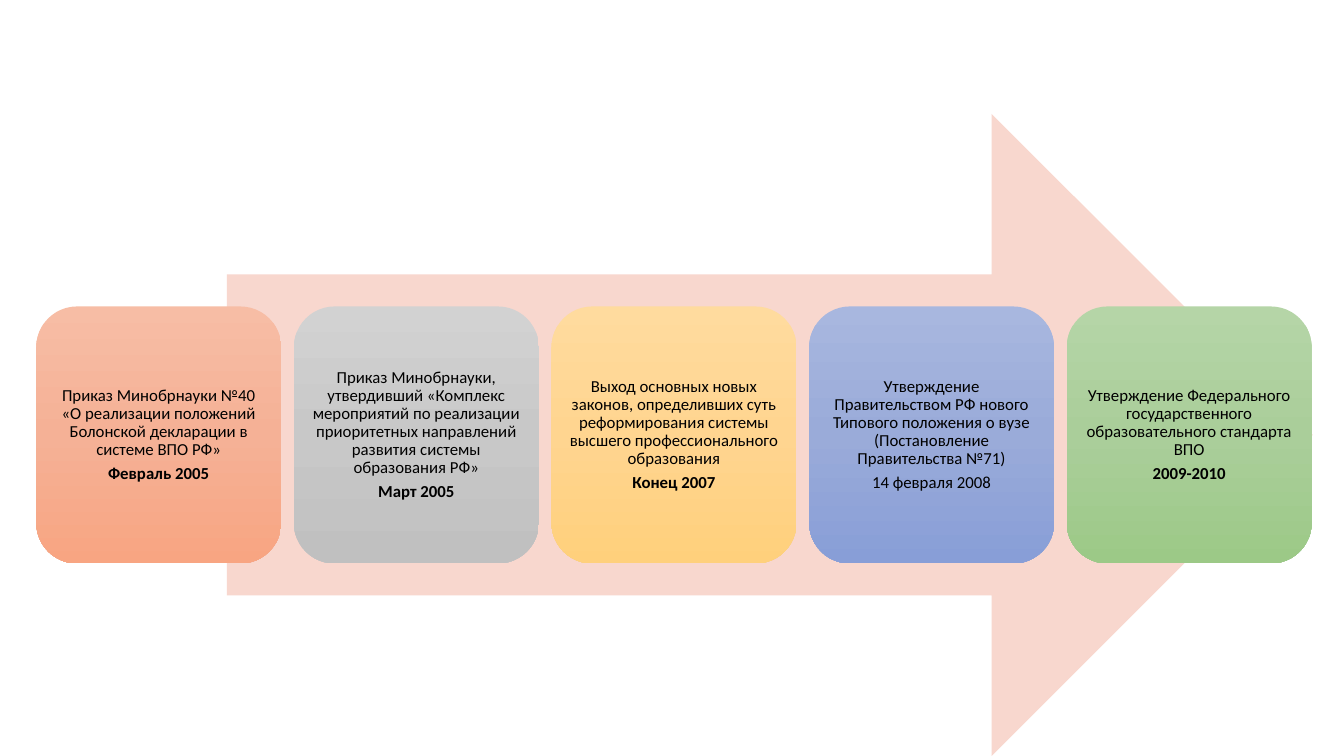
import copy

import pptx
import pptx.dml.color
import pptx.enum.shapes
import pptx.enum.text
import pptx.oxml.ns
import pptx.util

Inches = pptx.util.Inches
Pt = pptx.util.Pt
RGB = pptx.dml.color.RGBColor.from_string
SHAPE = pptx.enum.shapes.MSO_SHAPE

COLORS = {
    "arrow": "F8D7CE",
    "text": "000000",
    "orange": ("F7BDA5", "F5B196", "F8A582"),
    "gray": ("D2D2D2", "C8C8C8", "C0C0C0"),
    "gold": ("FFDB9E", "FFD590", "FFD07C"),
    "blue": ("A8B7DF", "9AABD9", "889ED7"),
    "green": ("B5D5A7", "AACE9A", "9CC987"),
}

# Colour, event, date, whether the date is bold
STEPS = [
    ("orange", "Приказ Минобрнауки №40 «О реализации положений Болонской "
     "декларации в системе ВПО РФ»", "Февраль 2005", True),
    ("gray", "Приказ Минобрнауки, утвердивший «Комплекс мероприятий по "
     "реализации приоритетных направлений развития системы образования РФ»",
     "Март 2005", True),
    ("gold", "Выход основных новых законов, определивших суть реформирования "
     "системы высшего профессионального образования", "Конец 2007", True),
    ("blue", "Утверждение Правительством РФ нового Типового положения о вузе "
     "(Постановление Правительства №71)", "14 февраля 2008", False),
    ("green", "Утверждение Федерального государственного образовательного "
     "стандарта ВПО", "2009-2010", True),
]

FIRST, LAST, TOP = 0.36, 10.58, 3.04
WIDTH, HEIGHT = 2.43, 2.55
PITCH = (LAST - FIRST) / (len(STEPS) - 1)


def add_shape(slide, kind, left, top, width, height):
    """Add a preset shape without outline or shadow."""
    shape = slide.shapes.add_shape(
        kind, Inches(left), Inches(top), Inches(width), Inches(height))
    shape.shadow.inherit = False
    shape.line.fill.background()
    return shape


def add_arrow(slide):
    arrow = add_shape(slide, SHAPE.RIGHT_ARROW, 2.25, 1.13, 10.77, 6.37)
    arrow.fill.solid()
    arrow.fill.fore_color.rgb = RGB(COLORS["arrow"])


def fill_down(shape, shades):
    """Fill with an even top-to-bottom gradient of three shades."""
    shape.fill.gradient()
    shape.fill.gradient_angle = 270
    stops = shape.element.spPr.find(
        ".//" + pptx.oxml.ns.qn("a:gsLst"))
    stops.insert(1, copy.deepcopy(stops[0]))
    for i, (stop, shade) in enumerate(zip(shape.fill.gradient_stops, shades)):
        stop.position = i / 2
        stop.color.rgb = RGB(shade)


def add_line(para, text, bold):
    para.alignment = pptx.enum.text.PP_ALIGN.CENTER
    para.line_spacing = 0.9
    para.space_after = Pt(4.2)
    run = para.add_run()
    run.text = text
    run.font.name = "Calibri"
    run.font.size = Pt(12)
    run.font.bold = bold
    run.font.color.rgb = RGB(COLORS["text"])


def add_card(slide, left, color, event, date, bold):
    card = add_shape(slide, SHAPE.ROUNDED_RECTANGLE, left, TOP, WIDTH, HEIGHT)
    fill_down(card, COLORS[color])
    frame = card.text_frame
    frame.word_wrap = True
    frame.vertical_anchor = pptx.enum.text.MSO_ANCHOR.MIDDLE
    frame.margin_left = frame.margin_right = Inches(0.05)
    frame.margin_top = frame.margin_bottom = Inches(0.05)
    add_line(frame.paragraphs[0], event, False)
    add_line(frame.add_paragraph(), date, bold)


def main():
    deck = pptx.Presentation()
    deck.slide_width = Inches(13.33)
    deck.slide_height = Inches(7.5)
    slide = deck.slides.add_slide(deck.slide_layouts[6])
    add_arrow(slide)
    for i, step in enumerate(STEPS):
        add_card(slide, FIRST + i * PITCH, *step)
    deck.save("out.pptx")


if __name__ == "__main__":
    main()
